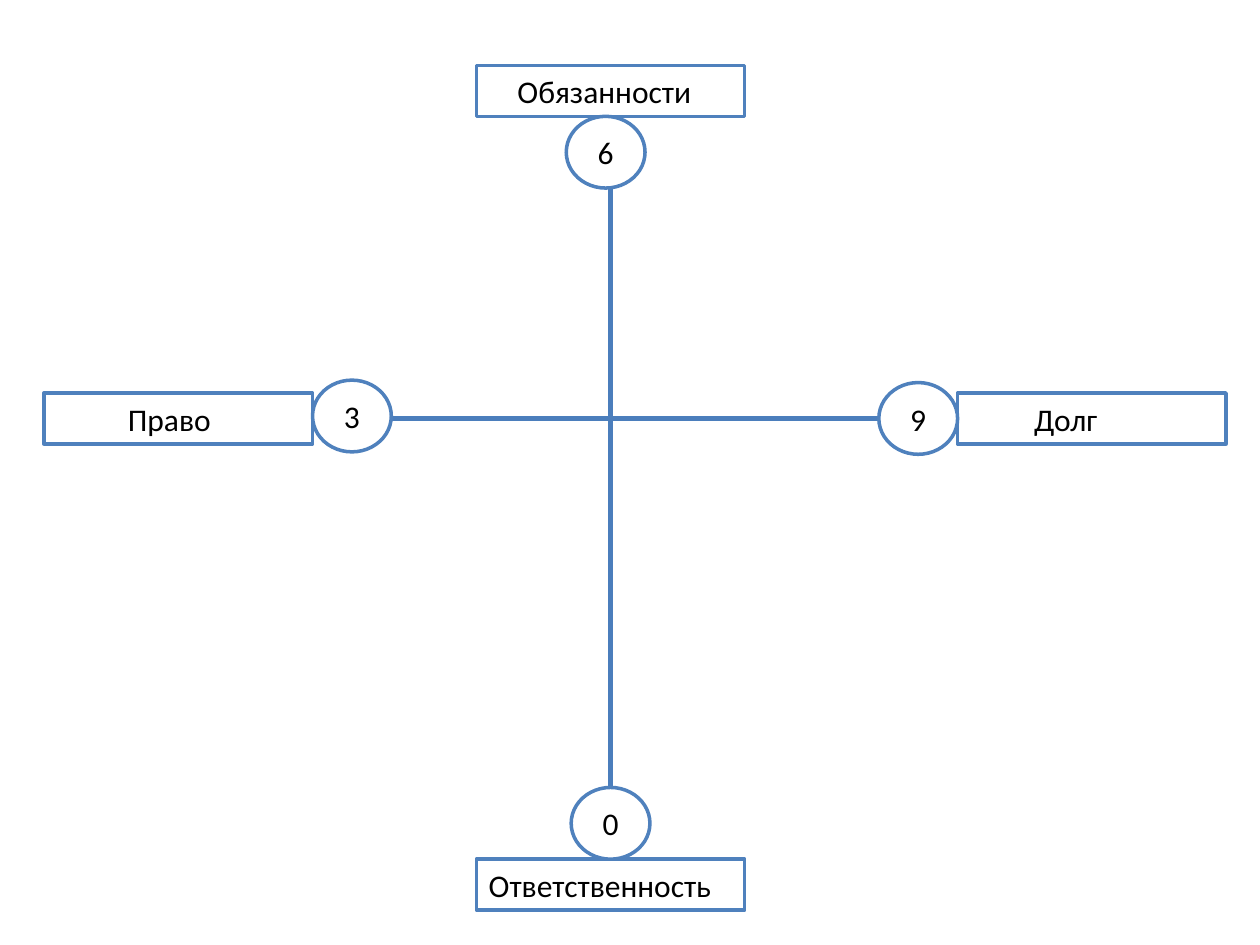
from dataclasses import dataclass

from lxml.etree import SubElement
from pptx import Presentation
from pptx.dml.color import RGBColor
from pptx.enum.shapes import MSO_CONNECTOR, MSO_SHAPE
from pptx.enum.text import MSO_ANCHOR, PP_ALIGN
from pptx.oxml.ns import qn
from pptx.util import Pt


@dataclass(frozen=True)
class Theme:
    """Colours, font and sizes of the slide."""
    outline: RGBColor = RGBColor(0x4F, 0x81, 0xBD)
    axis: RGBColor = RGBColor(0x4B, 0x7E, 0xBC)
    fill: RGBColor = RGBColor(0xFF, 0xFF, 0xFF)
    text: RGBColor = RGBColor(0, 0, 0)
    font: str = "Calibri"
    size: float = 18
    outline_width: float = 2
    axis_width: float = 3
    inset: float = 7.2


THEME = Theme()
LABEL_W, LABEL_H = 153.4, 29.1
NODE_W, NODE_H = 45, 41


def add_box(slide, kind, x, y, w, h, text, align, indent=0):
    """Add an outlined shape with one line of text."""
    s = slide.shapes.add_shape(kind, Pt(x), Pt(y), Pt(w), Pt(h))
    s.shadow.inherit = False
    s.fill.solid()
    s.fill.fore_color.rgb = THEME.fill
    s.line.color.rgb = THEME.outline
    s.line.width = Pt(THEME.outline_width)
    tf = s.text_frame
    tf.word_wrap = True
    tf.vertical_anchor = MSO_ANCHOR.MIDDLE
    tf.margin_left = Pt(THEME.inset + indent)
    p = tf.paragraphs[0]
    p.alignment = align
    r = p.add_run()
    r.text = text
    r.font.name = THEME.font
    r.font.size = Pt(THEME.size)
    r.font.color.rgb = THEME.text


def add_label(slide, x, y, text, indent):
    """Add a rectangular concept label."""
    add_box(slide, MSO_SHAPE.RECTANGLE, x, y, LABEL_W, LABEL_H, text,
            PP_ALIGN.LEFT, indent)


def add_node(slide, x, y, text):
    """Add a numbered circle."""
    add_box(slide, MSO_SHAPE.OVAL, x, y, NODE_W, NODE_H, text, PP_ALIGN.CENTER)


def add_axis(slide, x1, y1, x2, y2):
    """Add a straight axis line."""
    c = slide.shapes.add_connector(
        MSO_CONNECTOR.STRAIGHT, Pt(x1), Pt(y1), Pt(x2), Pt(y2))
    c.line.color.rgb = THEME.axis
    c.line.width = Pt(THEME.axis_width)
    SubElement(c._element.spPr, qn("a:effectLst"))


def add_cross(slide, x, y, w, h):
    """Draw the cross of four concepts inside the given box."""
    label_x = x + 247
    label_y = y + 187.2
    mid_x = label_x + LABEL_W / 2
    mid_y = label_y + LABEL_H / 2
    left, right = x + LABEL_W, x + w - LABEL_W
    top, bottom = y + LABEL_H, y + h - LABEL_H
    node_x = mid_x - NODE_W / 2
    node_y = mid_y - NODE_H / 2

    add_label(slide, label_x, y, "Обязанности", 16.3)
    add_label(slide, right, label_y, "Долг", 36.6)
    add_label(slide, label_x, bottom, "Ответственность", 0)
    add_label(slide, x, label_y, "Право", 40.7)
    add_axis(slide, mid_x, top, mid_x, bottom)
    add_axis(slide, left, mid_y, right, mid_y)
    add_node(slide, right - NODE_W, node_y, "9")
    add_node(slide, node_x - 2.8, top, "6")
    add_node(slide, left, node_y - 1.4, "3")
    add_node(slide, node_x, bottom - NODE_H, "0")


def main():
    """Build and save the presentation."""
    prs = Presentation()
    prs.slide_width, prs.slide_height = Pt(720), Pt(540)
    slide = prs.slides.add_slide(prs.slide_layouts[6])
    add_cross(slide, 25.2, 37.4, 675.4, 482.7)
    prs.save("out.pptx")


if __name__ == "__main__":
    main()
